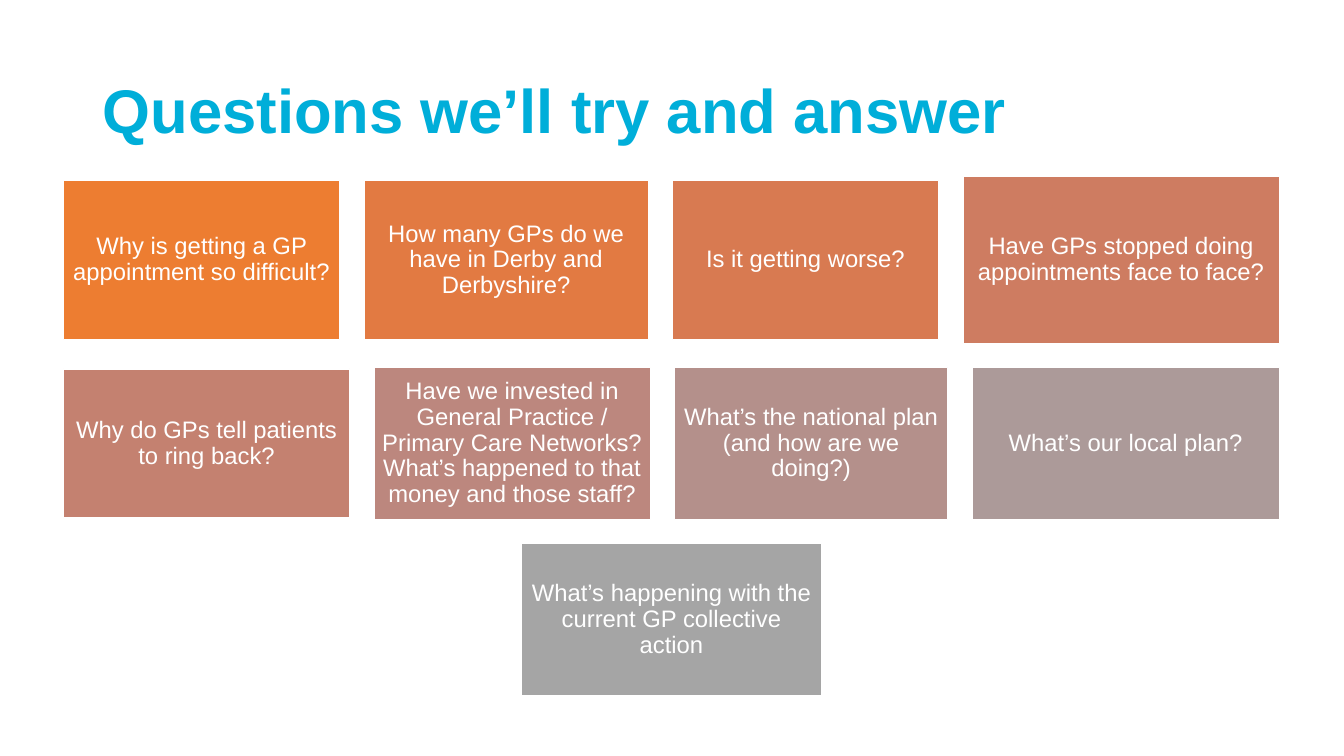
from dataclasses import dataclass

from pptx import Presentation
from pptx.dml.color import RGBColor
from pptx.enum.shapes import MSO_SHAPE
from pptx.enum.text import MSO_ANCHOR, PP_ALIGN
from pptx.util import Inches, Pt

RECT = MSO_SHAPE.RECTANGLE
MIDDLE = MSO_ANCHOR.MIDDLE
LEFT, CENTER = PP_ALIGN.LEFT, PP_ALIGN.CENTER


@dataclass
class Theme:
    font: str = "Arial"
    title: str = "00AED9"
    white: str = "FFFFFF"
    title_size: int = 44
    card_size: int = 17


theme = Theme()


def write(shape, text, size, color, align, inset, bold=False):
    """Fill a shape with one vertically centred paragraph."""
    frame = shape.text_frame
    frame.word_wrap = True
    frame.vertical_anchor = MIDDLE
    frame.margin_left = frame.margin_right = Inches(inset[0])
    frame.margin_top = frame.margin_bottom = Inches(inset[1])
    para = frame.paragraphs[0]
    para.alignment = align
    para.line_spacing = 0.9
    run = para.add_run()
    run.text = text
    run.font.name = theme.font
    run.font.size = Pt(size)
    run.font.bold = bold
    run.font.color.rgb = RGBColor.from_string(color)


deck = Presentation()
deck.slide_width = Inches(13.33)
deck.slide_height = Inches(7.5)
slide = deck.slides.add_slide(deck.slide_layouts[6])

# Title
title = slide.shapes.add_textbox(Inches(0.92), Inches(0.4), Inches(11.5), Inches(1.45))
write(title, "Questions we’ll try and answer", theme.title_size, theme.title,
      LEFT, (0.1, 0.05), bold=True)

# Rows of cards: middle height of the row, then width, height, fill, question
rows = [
    (2.58, [
        (2.74, 1.58, "ED7D31", "Why is getting a GP appointment so difficult?"),
        (2.82, 1.58, "E27A42", "How many GPs do we have in Derby and Derbyshire?"),
        (2.64, 1.58, "D87A51", "Is it getting worse?"),
        (3.14, 1.66, "CE7C61", "Have GPs stopped doing appointments face to face?"),
    ]),
    (4.4, [
        (2.84, 1.48, "C48170", "Why do GPs tell patients to ring back?"),
        (2.74, 1.51, "BC877E", "Have we invested in General Practice / Primary Care "
                               "Networks? What’s happened to that money and those staff?"),
        (2.71, 1.51, "B4908B", "What’s the national plan (and how are we doing?)"),
        (3.05, 1.51, "AC9A99", "What’s our local plan?"),
    ]),
    (6.15, [
        (2.98, 1.51, "A5A5A5", "What’s happening with the current GP collective action"),
    ]),
]
GAP = 0.24
AXIS = 6.66

# Each row is centred on the same axis
for mid, cards in rows:
    span = sum(card[0] for card in cards) + GAP * (len(cards) - 1)
    x = AXIS - span / 2
    for width, height, fill, text in cards:
        card = slide.shapes.add_shape(RECT, Inches(x), Inches(mid - height / 2),
                                      Inches(width), Inches(height))
        card.shadow.inherit = False
        card.fill.solid()
        card.fill.fore_color.rgb = RGBColor.from_string(fill)
        card.line.color.rgb = RGBColor.from_string(theme.white)
        card.line.width = Pt(1)
        write(card, text, theme.card_size, theme.white, CENTER, (0.07, 0.07))
        x += width + GAP

deck.save("out.pptx")
